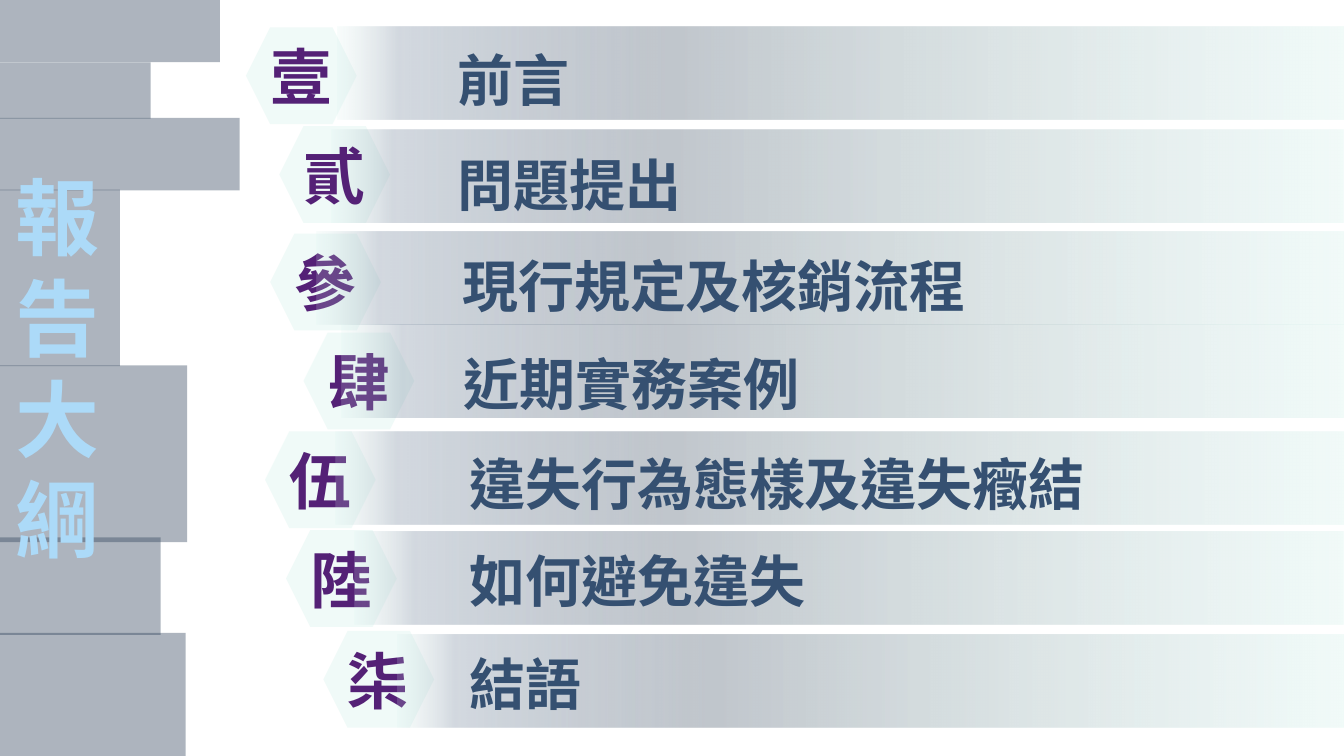
from lxml.etree import SubElement
from pptx import Presentation
from pptx.dml.color import RGBColor
from pptx.enum.shapes import MSO_SHAPE as Shape
from pptx.enum.text import MSO_ANCHOR as Anchor, MSO_AUTO_SIZE as AutoSize, PP_ALIGN as Align
from pptx.oxml import parse_xml
from pptx.oxml.ns import nsdecls, qn
from pptx.util import Cm, Pt

NAVY = RGBColor(0x28, 0x3C, 0x55)
MINT = RGBColor(0xDB, 0xF4, 0xEF)
GREY = RGBColor(0x98, 0xA1, 0xAB)
STEEL = RGBColor(0x6F, 0x82, 0x98)
PURPLE = RGBColor(0x54, 0x21, 0x76)
BLUE = RGBColor(0x35, 0x50, 0x71)
SKY = RGBColor(0xAC, 0xDA, 0xF8)

FONT = "Noto Sans CJK SC"
SLIDE_W, SLIDE_H = 33.87, 19.05
HEX_W, HEX_H = 2.79, 2.44
NUMERAL_W, NUMERAL_H, NUMERAL_DROP = 3.61, 2.13, 0.16
BAR_H, TOPIC_H = 2.34, 1.96

HEADING = "報告大綱"
HEADING_BOX = (0.15, 4.04, 3.94, 10.52)

CHAPTERS = [
    ("壹", "前言", (6.2, 0.69), (8.5, 0.67), (11.28, 1.02, 14.02)),
    ("貳", "問題提出", (7.04, 3.18), (8.36, 3.26), (11.28, 3.66, 13.61)),
    ("參", "現行規定及核銷流程", (6.81, 5.89), (7.99, 5.83), (11.4, 6.2, 13.79)),
    ("肆", "近期實務案例", (7.65, 8.38), (8.61, 8.18), (11.43, 8.69, 22.17)),
    ("伍", "違失行為態樣及違失癥結", (6.68, 10.87), (8.45, 10.88), (11.58, 11.2, 16.64)),
    ("陸", "如何避免違失", (7.21, 13.36), (8.95, 13.4), (11.58, 13.64, 16.69)),
    ("柒", "結語", (8.15, 15.9), (10.02, 16.0), (11.58, 16.23, 16.84)),
]
NUMERAL_ABOVE_BAR = "貳"

SIDE_BLOCKS = [
    (0, 5.54, 1.57),
    (1.57, 3.8, 1.42),
    (2.97, 6.04, 1.83),
    (4.78, 3.02, 4.45),
    (13.54, 4.05, 2.46),
    (9.21, 4.72, 4.45),
    (15.95, 4.68, 3.1),
]

BAR_STOPS = [(0, MINT, 38), (67, GREY, 60), (94, STEEL, 30), (100, MINT, 17)]

FRAME_FORMAT = {
    "word_wrap": True,
    "auto_size": AutoSize.NONE,
    "vertical_anchor": Anchor.TOP,
    "margin_left": Cm(0.25),
    "margin_right": Cm(0.25),
    "margin_top": Cm(0.13),
    "margin_bottom": Cm(0),
}
NUMERAL_FONT = {"name": FONT, "bold": True, "size": Pt(44)}
TOPIC_FONT = {"name": FONT, "bold": True, "size": Pt(40)}
HEADING_FONT = {"name": FONT, "bold": True, "size": Pt(60)}


def apply(target, formats):
    for attribute, value in formats.items():
        setattr(target, attribute, value)


def write(holder, text, font_format, color, align=Align.LEFT):
    frame = holder.text_frame
    apply(frame, FRAME_FORMAT)
    paragraph = frame.paragraphs[0]
    apply(paragraph, {"alignment": align, "line_spacing": 1.0, "space_before": Pt(0)})
    run = paragraph.add_run()
    run.text = text
    apply(run.font, font_format)
    run.font.color.rgb = color
    properties = run._r.get_or_add_rPr()
    properties.set("lang", "zh-TW")
    SubElement(properties, qn("a:ea")).set("typeface", FONT)


def add_text(slide, box, *content):
    write(slide.shapes.add_textbox(*map(Cm, box)), *content)


def add_plain(slide, kind, box):
    shape = slide.shapes.add_shape(kind, *map(Cm, box))
    shape.shadow.inherit = False
    shape.line.fill.background()
    return shape


def add_tinted(slide, kind, box, color, opacity):
    shape = add_plain(slide, kind, box)
    shape.fill.solid()
    shape.fill.fore_color.rgb = color
    tint = shape.element.spPr.find(qn("a:solidFill"))[0]
    SubElement(tint, qn("a:alpha")).set("val", str(opacity * 1000))


def add_bar(slide, left, top):
    bar = add_plain(slide, Shape.RECTANGLE, (left, top, SLIDE_W - left, BAR_H))
    stops = "".join(
        f'<a:gs pos="{place * 1000}"><a:srgbClr val="{color}">'
        f'<a:alpha val="{opacity * 1000}"/></a:srgbClr></a:gs>'
        for place, color, opacity in BAR_STOPS
    )
    gradient = parse_xml(
        f'<a:gradFill {nsdecls("a")} rotWithShape="1"><a:gsLst>{stops}</a:gsLst>'
        '<a:lin ang="10800000" scaled="0"/></a:gradFill>'
    )
    bar.element.spPr.find(qn("a:prstGeom")).addnext(gradient)


def add_chapter(slide, numeral, topic, hexagon, bar, topic_box):
    left, top = hexagon
    add_tinted(slide, Shape.HEXAGON, (left, top, HEX_W, HEX_H), MINT, 40)
    numeral_box = (left + (HEX_W - NUMERAL_W) / 2, top + NUMERAL_DROP, NUMERAL_W, NUMERAL_H)
    numeral_text = (numeral_box, numeral, NUMERAL_FONT, PURPLE, Align.CENTER)
    if numeral == NUMERAL_ABOVE_BAR:
        add_bar(slide, *bar)
        add_text(slide, *numeral_text)
    else:
        add_text(slide, *numeral_text)
        add_bar(slide, *bar)
    add_text(slide, (*topic_box, TOPIC_H), topic, TOPIC_FONT, BLUE)


def main():
    deck = Presentation()
    apply(deck, {"slide_width": Cm(SLIDE_W), "slide_height": Cm(SLIDE_H)})
    slide = deck.slides.add_slide(deck.slide_layouts[5])
    for chapter in CHAPTERS:
        add_chapter(slide, *chapter)
    for top, width, height in SIDE_BLOCKS:
        add_tinted(slide, Shape.RECTANGLE, (0, top, width, height), NAVY, 38)
    heading = slide.shapes.title
    apply(heading, dict(zip(("left", "top", "width", "height"), map(Cm, HEADING_BOX))))
    write(heading, HEADING, HEADING_FONT, SKY)
    heading.element.getparent().append(heading.element)
    deck.save("out.pptx")


if __name__ == "__main__":
    main()
